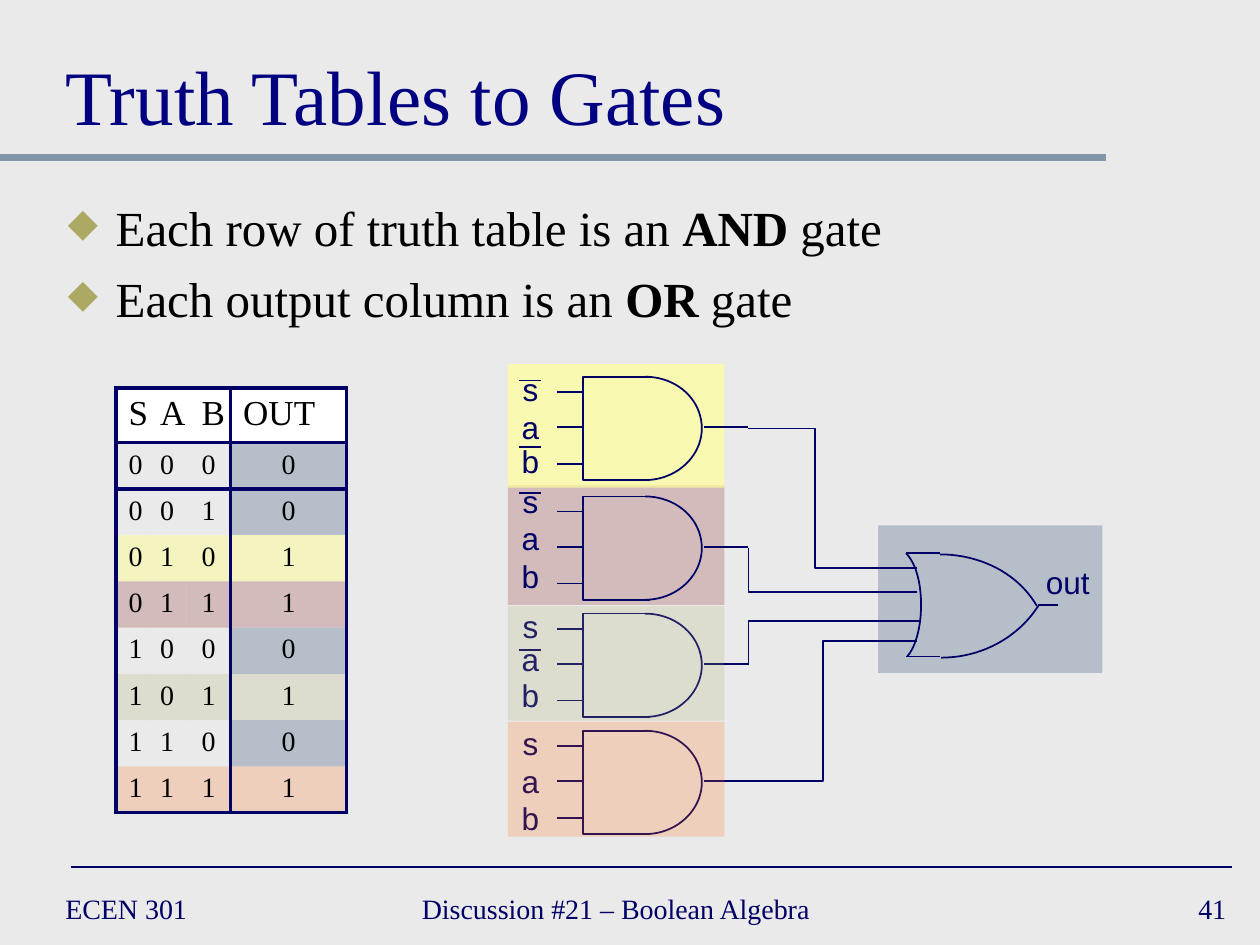
from dataclasses import dataclass

from lxml.etree import SubElement
from pptx import Presentation
from pptx.dml.color import RGBColor
from pptx.enum.shapes import MSO_CONNECTOR, MSO_SHAPE
from pptx.enum.text import MSO_ANCHOR, MSO_AUTO_SIZE, PP_ALIGN
from pptx.oxml import parse_xml
from pptx.oxml.ns import nsdecls, qn
from pptx.util import Inches, Pt

Point = tuple[float, float]

COLOURS = {
    "paper": "EAEAEA", "navy": "000066", "title": "000080", "slate": "8495A9",
    "black": "000000", "white": "FFFFFF", "yellow": "FFFF99",
    "maroon": "800000", "olive": "ACA964", "orange": "FF6600",
}
SERIF, SANS = "Times New Roman", "Arial"


@dataclass
class Gate:
    top: float
    colour: str
    opacity: int
    panel_top: float
    panel_height: float
    label_tops: tuple[float, float, float]
    inverted: str          # inputs that carry an overbar
    panel_in_front: bool
    wire: list[Point]


GATES = [
    Gate(2.99, "yellow", 70, 2.89, 0.98, (2.89, 3.19, 3.46), "sb", False,
         [(5.94, 3.4), (6.47, 3.4), (6.47, 4.51), (6.99, 4.51)]),
    Gate(3.94, "maroon", 20, 3.85, 0.95, (3.78, 4.07, 4.37), "s", False,
         [(5.94, 4.35), (5.94, 4.7), (6.99, 4.7)]),
    Gate(4.87, "olive", 20, 4.81, 0.91, (4.77, 5.03, 5.32), "a", True,
         [(5.94, 5.28), (5.94, 4.93), (7.05, 4.93)]),
    Gate(5.8, "orange", 20, 5.73, 0.91, (5.7, 6, 6.29), "", True,
         [(5.94, 6.2), (6.53, 6.2), (6.53, 5.09), (6.99, 5.09)]),
]
TRUTH_ROWS = ["0000", "0010", "0101", "0111", "1000", "1011", "1100", "1111"]
ROW_TINTS = {3: ("yellow", 50), 4: ("maroon", 20), 6: ("olive", 20), 8: ("orange", 20)}


def rgb(name: str) -> RGBColor:
    return RGBColor.from_string(COLOURS[name])


def tint(fill, element, colour: str, opacity: int = 100) -> None:
    fill.solid()
    fill.fore_color.rgb = rgb(colour)
    if opacity < 100:
        value = element.find(f"{qn('a:solidFill')}/{qn('a:srgbClr')}")
        SubElement(value, qn("a:alpha")).set("val", str(opacity * 1000))


def add_span(para, text: str, *, size: float, font=SERIF, colour="navy", bold=False) -> None:
    span = para.add_run()
    span.text = text
    span.font.size, span.font.name, span.font.bold = Pt(size), font, bold
    span.font.color.rgb = rgb(colour)


def add_text(page, text: str, left: float, top: float, width: float, height: float, *,
             align=PP_ALIGN.LEFT, anchor=MSO_ANCHOR.TOP, wrap=True, **style) -> None:
    box = page.shapes.add_textbox(Inches(left), Inches(top), Inches(width), Inches(height))
    box.text_frame.word_wrap = wrap
    box.text_frame.vertical_anchor = anchor
    para = box.text_frame.paragraphs[0]
    para.alignment = align
    add_span(para, text, **style)


def add_panel(page, left: float, top: float, width: float, height: float,
              colour: str, opacity: int) -> None:
    panel = page.shapes.add_shape(MSO_SHAPE.RECTANGLE, Inches(left), Inches(top),
                                  Inches(width), Inches(height))
    panel.shadow.inherit = False
    panel.line.fill.background()
    tint(panel.fill, panel._element.spPr, colour, opacity)


def add_line(page, start: Point, end: Point, *, colour="navy", width=1.0) -> None:
    line = page.shapes.add_connector(MSO_CONNECTOR.STRAIGHT, *map(Inches, start + end))
    line.line.color.rgb = rgb(colour)
    line.line.width = Pt(width)
    SubElement(line._element.spPr, qn("a:effectLst"))


def add_outline(page, points: list[Point]) -> None:
    corners = [(Inches(x), Inches(y)) for x, y in points]
    builder = page.shapes.build_freeform(*corners[0])
    builder.add_line_segments(corners[1:], close=False)
    outline = builder.convert_to_shape()
    outline.shadow.inherit = False
    outline.fill.background()
    outline.line.color.rgb = rgb("navy")
    outline.line.width = Pt(1)


def curve(a: Point, b: Point, c: Point, d: Point, steps: int = 20) -> list[Point]:
    """Points along a cubic Bezier curve."""
    def blend(t: float, axis: int) -> float:
        u = 1 - t
        return (u**3 * a[axis] + 3 * u * u * t * b[axis]
                + 3 * u * t * t * c[axis] + t**3 * d[axis])
    return [(blend(i / steps, 0), blend(i / steps, 1)) for i in range(steps + 1)]


def add_gate_panel(page, gate: Gate) -> None:
    add_panel(page, 4.03, gate.panel_top, 1.72, gate.panel_height, gate.colour, gate.opacity)


def add_and_gate(page, gate: Gate) -> None:
    top, middle, bottom = gate.top, gate.top + 0.41, gate.top + 0.82
    upper = curve((5.12, top), (5.37, top), (5.57, top + 0.18), (5.57, middle))
    lower = curve((5.57, middle), (5.57, bottom - 0.19), (5.37, bottom), (5.12, bottom))
    add_outline(page, upper + lower[1:])
    add_outline(page, [(5.16, top), (4.63, top), (4.63, bottom), (5.16, bottom)])
    for offset in (0.12, 0.4, 0.69):
        add_line(page, (4.63, top + offset), (4.42, top + offset))
    add_line(page, (5.94, top + 0.4), (5.59, top + 0.4))


def add_labels(page, gate: Gate) -> None:
    for name, top in zip("sab", gate.label_tops):
        add_text(page, name, 4.04, top, 0.34, 0.4, align=PP_ALIGN.CENTER,
                 wrap=False, size=18, font=SANS)
        if name in gate.inverted:
            bar = top + (0.09 if name == "b" else 0.13)
            add_line(page, (4.12, bar), (4.29, bar))


def add_or_gate(page) -> None:
    add_outline(page, curve((7.46, 4.4), (7.78, 4.4), (8.08, 4.55), (8.23, 4.81)))
    add_outline(page, curve((8.24, 4.81), (8.08, 5.06), (7.79, 5.22), (7.47, 5.22)))
    back = curve((7.19, 4.39), (7.27, 4.47), (7.31, 4.63), (7.31, 4.8))
    add_outline(page, back + curve((7.31, 4.8), (7.31, 4.97), (7.27, 5.13), (7.2, 5.21))[1:])
    for left, right, y in [(7.19, 7.46, 4.39), (7.19, 7.46, 5.21), (6.94, 7.28, 4.51),
                           (6.97, 7.28, 4.7), (6.99, 7.31, 4.93), (6.94, 7.28, 5.09),
                           (8.24, 8.4, 4.8)]:
        add_line(page, (right, y), (left, y))


def add_borders(cell, sides: str) -> None:
    properties = cell._tc.get_or_add_tcPr()
    for index, side in enumerate(s for s in "LRTB" if s in sides):
        properties.insert(index, parse_xml(
            f'<a:ln{side} {nsdecls("a")} w="{Pt(2.25)}"><a:solidFill>'
            f'<a:srgbClr val="{COLOURS["navy"]}"/></a:solidFill></a:ln{side}>'))


def add_truth_table(page) -> None:
    rows = [["S", "A", "B", "OUT"], *map(list, TRUTH_ROWS)]
    frame = page.shapes.add_table(len(rows), 4, Inches(0.92), Inches(3.08),
                                  Inches(1.83), Inches(3.19))
    table = frame.table
    table.first_row = table.horz_banding = False
    # Style without grid or fill
    table._tbl.tblPr.find(qn("a:tableStyleId")).text = "{2D5ABB26-0587-4C30-8999-92F81FD0307C}"
    for column, width in zip(table.columns, (0.25, 0.33, 0.33, 0.92)):
        column.width = Inches(width)
    for r, values in enumerate(rows):
        table.rows[r].height = Inches(0.41 if r == 0 else 0.35)
        for c, value in enumerate(values):
            cell = table.cell(r, c)
            para = cell.text_frame.paragraphs[0]
            para.alignment = PP_ALIGN.CENTER if r and c == 3 else PP_ALIGN.LEFT
            add_span(para, value, size=16 if r else 20, colour="black")
            colour = ("white", 100) if r == 0 else ROW_TINTS.get(r)
            if colour is None and c == 3:
                colour = ("slate", 50)
            if colour:
                tint(cell.fill, cell._tc.get_or_add_tcPr(), *colour)
            else:
                cell.fill.background()
            add_borders(cell, ("L" if c in (0, 3) else "") + ("R" if c >= 2 else "")
                        + ("T" if r <= 1 else "") + ("B" if r in (0, 8) else ""))


def add_bullets(page) -> None:
    box = page.shapes.add_textbox(Inches(0.44), Inches(1.52), Inches(9.14), Inches(1.48))
    frame = box.text_frame
    frame.word_wrap = True
    for index, (subject, gate) in enumerate([("row of truth table", "AND"),
                                             ("output column", "OR")]):
        para = frame.add_paragraph() if index else frame.paragraphs[0]
        if index:
            para.space_before = Pt(7)
        properties = para._p.get_or_add_pPr()
        properties.set("marL", str(Inches(0.38)))
        properties.set("indent", str(Inches(-0.38)))
        colour = SubElement(properties, qn("a:buClr"))
        SubElement(colour, qn("a:srgbClr")).set("val", COLOURS["olive"])
        SubElement(properties, qn("a:buSzPct")).set("val", "80000")
        SubElement(properties, qn("a:buChar")).set("char", "◆")
        for text, bold in [(f"Each {subject} is an ", False), (gate, True), (" gate", False)]:
            add_span(para, text, size=28, colour="black", bold=bold)


def add_title(page, text: str) -> None:
    title = page.shapes.title
    title.left, title.top, title.width, title.height = map(Inches, (0.42, 0.17, 9.17, 1))
    frame = title.text_frame
    frame.vertical_anchor, frame.auto_size = MSO_ANCHOR.BOTTOM, MSO_AUTO_SIZE.NONE
    frame.paragraphs[0].alignment = PP_ALIGN.LEFT
    add_span(frame.paragraphs[0], text, size=44, colour="title")


def main() -> None:
    deck = Presentation()
    deck.slide_width, deck.slide_height = Inches(10), Inches(7.5)
    page = deck.slides.add_slide(deck.slide_layouts[5])
    page.background.fill.solid()
    page.background.fill.fore_color.rgb = rgb("paper")

    # Rules and footer
    add_line(page, (0, 1.25), (8.78, 1.25), colour="slate", width=4)
    add_line(page, (0.56, 6.88), (9.78, 6.88))
    for text, left, width, align in [
            ("ECEN 301", 0.42, 2.17, PP_ALIGN.LEFT),
            ("Discussion #21 – Boolean Algebra", 3.25, 3.83, PP_ALIGN.LEFT),
            ("41", 7.75, 2.08, PP_ALIGN.RIGHT)]:
        add_text(page, text, left, 7, width, 0.42, align=align,
                 anchor=MSO_ANCHOR.MIDDLE, size=16)

    # Title, bullets and truth table
    add_title(page, "Truth Tables to Gates")
    add_bullets(page)
    add_truth_table(page)

    # Circuit: two panels lie behind their gates, two in front
    for gate in reversed(GATES):
        if not gate.panel_in_front:
            add_gate_panel(page, gate)
    add_panel(page, 6.97, 4.17, 1.78, 1.17, "slate", 50)
    for gate in GATES:
        add_and_gate(page, gate)
        add_outline(page, gate.wire)
        add_labels(page, gate)
    add_or_gate(page)
    add_text(page, "out", 8.2, 4.42, 0.55, 0.4, align=PP_ALIGN.CENTER,
             wrap=False, size=18, font=SANS)
    for gate in GATES:
        if gate.panel_in_front:
            add_gate_panel(page, gate)

    deck.save("out.pptx")


if __name__ == "__main__":
    main()
